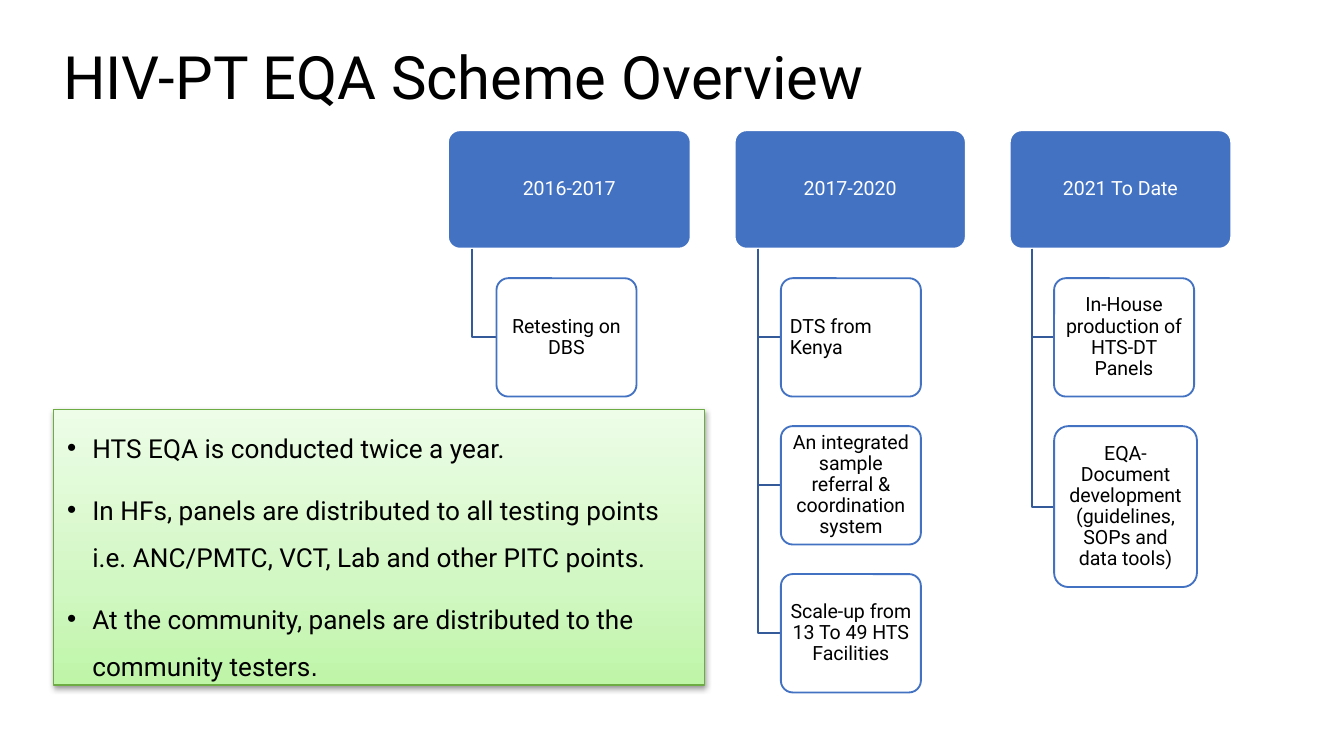
import copy
from dataclasses import dataclass

import pptx
import pptx.dml.color
import pptx.enum.shapes
import pptx.enum.text
import pptx.oxml
import pptx.oxml.ns
import pptx.util
from pptx.slide import Slide

Pt = pptx.util.Pt
RGBColor = pptx.dml.color.RGBColor
ALIGN = pptx.enum.text.PP_ALIGN
ANCHOR = pptx.enum.text.MSO_ANCHOR
qn = pptx.oxml.ns.qn

BLACK = RGBColor(0x00, 0x00, 0x00)
WHITE = RGBColor(0xFF, 0xFF, 0xFF)
BLUE = RGBColor(0x43, 0x72, 0xC3)
DARK_BLUE = RGBColor(0x34, 0x5A, 0x99)
GREEN = RGBColor(0x6D, 0xAC, 0x43)
GREEN_STOPS = [
    (0, RGBColor(0xBE, 0xF5, 0xA7)),
    (0.35, RGBColor(0xD1, 0xF7, 0xC2)),
    (1, RGBColor(0xED, 0xFD, 0xE7)),
]
FONT = "Roboto"
NAMESPACE = pptx.oxml.ns.nsdecls("a")

HEADER_TOP = 69.8
BOX_HEIGHT = 63.4
BOX_GAP = BOX_HEIGHT / 4
CORNER = 0.1


@dataclass
class Step:
    text: str
    width: float = 75
    height: float = BOX_HEIGHT
    alignment: ALIGN = ALIGN.CENTER


@dataclass
class Period:
    title: str
    left: float
    width: float
    steps: list[Step]


PERIODS = [
    Period("2016-2017", 240, 130, [Step("Retesting on DBS")]),
    Period("2017-2020", 393.6, 123.8, [
        Step("DTS from Kenya", alignment=ALIGN.LEFT),
        Step("An integrated sample referral & coordination system"),
        Step("Scale-up from 13 To 49 HTS Facilities"),
    ]),
    Period("2021 To Date", 541, 118.6, [
        Step("In-House production of HTS-DT Panels"),
        Step("EQA-Document development (guidelines, SOPs and data tools)", 76.5, 86.2),
    ]),
]

# Text of each bullet, split where the font changes
BULLETS = [
    [("HTS EQA is conducted twice a year.", FONT)],
    [("In HFs, panels are distributed to all testing points i.e. ANC/PMTC, VCT, "
      "Lab and other PITC points.", FONT)],
    [("At the community, panels are distributed to the community testers", FONT),
     (".", "Arial")],
]


def place(shape, left: float, top: float, width: float, height: float) -> None:
    shape.left, shape.top = Pt(left), Pt(top)
    shape.width, shape.height = Pt(width), Pt(height)


def set_margins(text_frame, horizontal: float, vertical: float) -> None:
    text_frame.margin_left = text_frame.margin_right = Pt(horizontal)
    text_frame.margin_top = text_frame.margin_bottom = Pt(vertical)


def format_font(font, size: float, color: RGBColor, name: str = FONT) -> None:
    font.name, font.size = name, Pt(size)
    font.color.rgb = color


def add_title(slide: Slide) -> None:
    title = slide.shapes.title
    place(title, 28.8, 23.6, 620.6, 39)
    text_frame = title.text_frame
    text_frame.text = "HIV-PT EQA Scheme Overview"
    text_frame.auto_size = pptx.enum.text.MSO_AUTO_SIZE.NONE
    text_frame.vertical_anchor = ANCHOR.MIDDLE
    set_margins(text_frame, 5, 3)
    paragraph = text_frame.paragraphs[0]
    paragraph.alignment = ALIGN.LEFT
    paragraph.line_spacing = 0.9
    format_font(paragraph.runs[0].font, 32, BLACK)


def add_box(slide: Slide, left: float, top: float, step: Step, fill: RGBColor,
            line: RGBColor, text_color: RGBColor):
    shape = slide.shapes.add_shape(
        pptx.enum.shapes.MSO_SHAPE.ROUNDED_RECTANGLE,
        Pt(left), Pt(top), Pt(step.width), Pt(step.height))
    shape.adjustments[0] = CORNER
    shape.shadow.inherit = False
    shape.fill.solid()
    shape.fill.fore_color.rgb = fill
    shape.line.color.rgb = line
    shape.line.width = Pt(1)
    # Keep the text clear of the rounded corners
    inset = 0.29 * CORNER * min(step.width, step.height) + 1.2
    text_frame = shape.text_frame
    text_frame.text = step.text
    text_frame.word_wrap = True
    text_frame.vertical_anchor = ANCHOR.MIDDLE
    set_margins(text_frame, inset, inset)
    paragraph = text_frame.paragraphs[0]
    paragraph.alignment = step.alignment
    paragraph.line_spacing = 0.9
    format_font(paragraph.runs[0].font, 10.5, text_color)
    return shape


def add_elbow(slide: Slide, left: float, top: float, right: float, bottom: float) -> None:
    builder = slide.shapes.build_freeform(Pt(left), Pt(top))
    builder.add_line_segments(
        [(Pt(left), Pt(bottom)), (Pt(right), Pt(bottom))], close=False)
    elbow = builder.convert_to_shape()
    elbow.shadow.inherit = False
    elbow.fill.background()
    elbow.line.color.rgb = DARK_BLUE
    elbow.line.width = Pt(1)


def add_period(slide: Slide, period: Period) -> None:
    add_box(slide, period.left, HEADER_TOP, Step(period.title, period.width),
            BLUE, WHITE, WHITE)
    header_bottom = HEADER_TOP + BOX_HEIGHT
    trunk = period.left + 0.1 * period.width
    step_left = period.left + 0.2 * period.width
    top = header_bottom + BOX_GAP
    for step in period.steps:
        add_elbow(slide, trunk, header_bottom, step_left, top + step.height / 2)
        box = add_box(slide, step_left, top, step, WHITE, BLUE, BLACK)
        color = box._element.spPr.find(qn("a:solidFill")).find(qn("a:srgbClr"))
        color.append(pptx.oxml.parse_xml(f'<a:alpha {NAMESPACE} val="90000"/>'))
        top += step.height + BOX_GAP


def style_panel(panel) -> None:
    panel.fill.gradient()
    panel.fill.gradient_angle = 90
    stop_list = panel._element.spPr.find(".//" + qn("a:gsLst"))
    stop_list.append(copy.deepcopy(stop_list[-1]))
    for stop, (position, color) in zip(panel.fill.gradient_stops, GREEN_STOPS):
        stop.position = position
        stop.color.rgb = color
    panel.line.color.rgb = GREEN
    panel.line.width = Pt(0.75)
    panel._element.spPr.append(pptx.oxml.parse_xml(
        f'<a:effectLst {NAMESPACE}><a:outerShdw blurRad="{Pt(3.1)}" dist="{Pt(1.6)}" '
        'dir="5400000" rotWithShape="0"><a:srgbClr val="000000">'
        '<a:alpha val="38000"/></a:srgbClr></a:outerShdw></a:effectLst>'))


def add_bullets(slide: Slide) -> None:
    panel = slide.placeholders[1]
    place(panel, 28.8, 219.4, 348.8, 147.6)
    style_panel(panel)
    text_frame = panel.text_frame
    text_frame.auto_size = pptx.enum.text.MSO_AUTO_SIZE.NONE
    text_frame.vertical_anchor = ANCHOR.TOP
    set_margins(text_frame, 7.2, 3.6)
    for index, parts in enumerate(BULLETS):
        paragraph = text_frame.add_paragraph() if index else text_frame.paragraphs[0]
        properties = paragraph._p.get_or_add_pPr()
        properties.set("marL", str(Pt(13.5)))
        properties.set("indent", str(-Pt(13.5)))
        for bullet in ('<a:buClr {}><a:srgbClr val="000000"/></a:buClr>',
                       '<a:buFont {} typeface="Arial"/>', '<a:buChar {} char="•"/>'):
            properties.append(pptx.oxml.parse_xml(bullet.format(NAMESPACE)))
        paragraph.alignment = ALIGN.LEFT
        paragraph.line_spacing = 1.5
        paragraph.space_before = Pt(8 if index else 0)
        for text, font_name in parts:
            run = paragraph.add_run()
            run.text = text
            format_font(run.font, 14, BLACK, font_name)


def main() -> None:
    presentation = pptx.Presentation()
    presentation.slide_width, presentation.slide_height = Pt(720), Pt(405)
    slide = presentation.slides.add_slide(presentation.slide_layouts[1])
    add_title(slide)
    for period in PERIODS:
        add_period(slide, period)
    add_bullets(slide)
    presentation.save("out.pptx")


if __name__ == "__main__":
    main()
